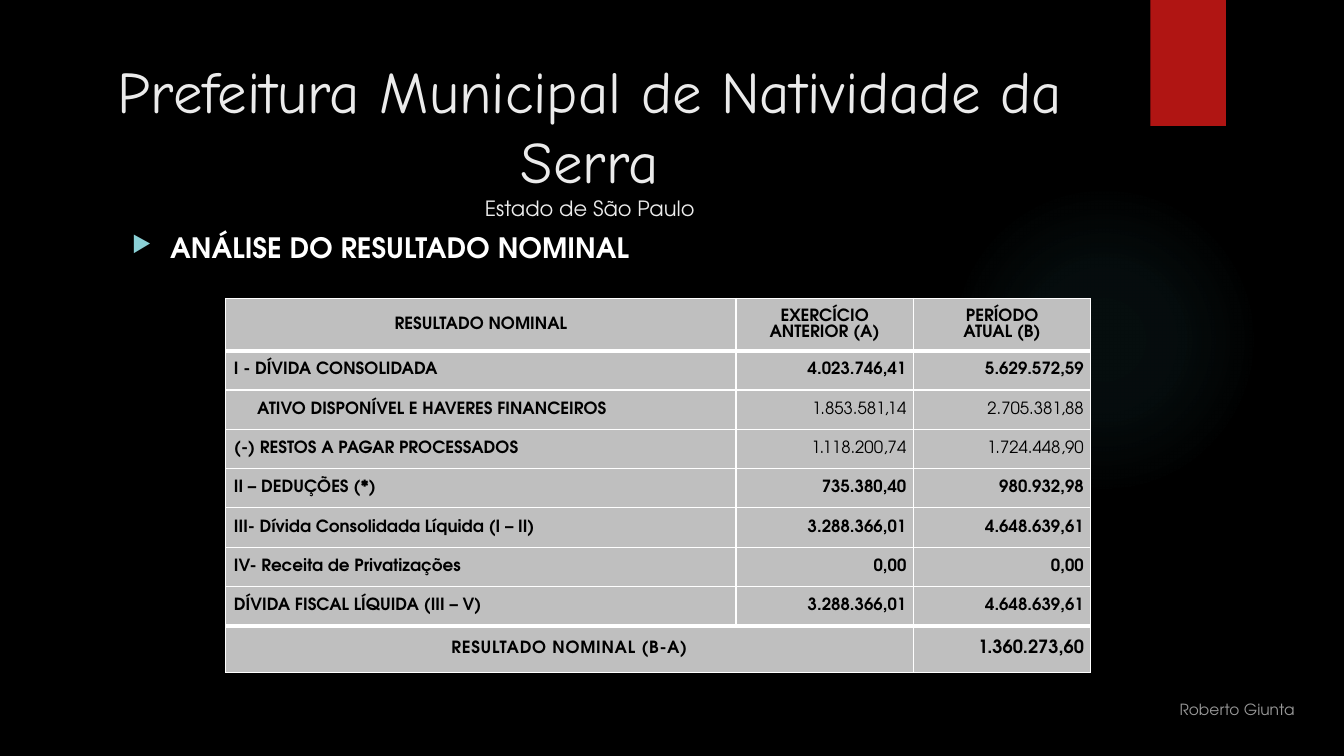
"""Builds the nominal result slide of the Natividade da Serra city hall."""
import pptx
import pptx.util
import pptx.dml.color
import pptx.enum.shapes
import pptx.enum.text
import pptx.oxml
import lxml.etree

Inches, Pt = pptx.util.Inches, pptx.util.Pt
ALIGN, ANCHOR = pptx.enum.text.PP_ALIGN, pptx.enum.text.MSO_ANCHOR
SHAPE = pptx.enum.shapes.MSO_SHAPE
NS = 'xmlns:a="http://schemas.openxmlformats.org/drawingml/2006/main"'
SANS, HAND = "TeX Gyre Adventor", "Comic Neue"
COLORS = {"background": "000000", "ribbon": "B01513", "glow": "50B9C1",
          "bullet": "8AD0D6", "title": "EBEBEB", "heading": "FFFFFF",
          "cell": "BFBFBF", "border": "FFFFFF", "figures": "000000",
          "author": "999999"}


def rgb(name):
    return pptx.dml.color.RGBColor.from_string(COLORS[name])


def style(run, size, color, bold=False, font=SANS):
    run.font.size, run.font.bold, run.font.name = Pt(size), bold, font
    run.font.color.rgb = rgb(color)


presentation = pptx.Presentation()
presentation.slide_width, presentation.slide_height = Inches(13.33), Inches(7.5)
slide = presentation.slides.add_slide(presentation.slide_layouts[5])
slide.background.fill.solid()
slide.background.fill.fore_color.rgb = rgb("background")

glow = slide.shapes.add_shape(SHAPE.OVAL, Inches(9.41), Inches(1.83), Inches(3.08), Inches(3.08))
ribbon = slide.shapes.add_shape(SHAPE.RECTANGLE, Inches(11.41), 0, Inches(0.75), Inches(1.25))
for decoration, color in ((glow, "glow"), (ribbon, "ribbon")):
    decoration.shadow.inherit = False
    decoration.line.fill.background()
    decoration.fill.solid()
    decoration.fill.fore_color.rgb = rgb(color)
stops = "".join(
    f'<a:gs pos="{share * 1000}"><a:srgbClr val="{COLORS["glow"]}">'
    f'<a:alpha val="{alpha * 1000}"/></a:srgbClr></a:gs>'
    for share, alpha in ((0, 7), (36, 6), (69, 0), (100, 0)))
solid = glow.element.spPr.find(".//{*}solidFill")
glow.element.spPr.replace(solid, pptx.oxml.parse_xml(
    f'<a:gradFill {NS}><a:gsLst>{stops}</a:gsLst><a:path path="circle">'
    '<a:fillToRect l="50000" t="50000" r="50000" b="50000"/></a:path></a:gradFill>'))

title = slide.shapes.title
title.left, title.top, title.width, title.height = (Inches(n) for n in (0.71, 0.49, 10.28, 1.53))
title.text_frame.text = "Prefeitura Municipal de Natividade da Serra\vEstado de São Paulo"
title.text_frame.word_wrap = True
title.text_frame.auto_size = pptx.enum.text.MSO_AUTO_SIZE.NONE
title.text_frame.vertical_anchor = ANCHOR.TOP
name_line = title.text_frame.paragraphs[0]
name_line.alignment = ALIGN.CENTER
city, state = name_line.runs
style(city, 42, "title", font=HAND)
style(state, 15, "title")

heading = slide.shapes.add_textbox(Inches(1.21), Inches(2.24), Inches(9.78), Inches(0.5))
heading.text_frame.word_wrap = True
topic = heading.text_frame.paragraphs[0]
topic.text = "ANÁLISE DO RESULTADO NOMINAL"
topic_format = topic._p.get_or_add_pPr()
topic_format.set("marL", str(Inches(0.38)))
topic_format.set("indent", str(-Inches(0.38)))
for bullet in (f'<a:buClr {NS}><a:srgbClr val="{COLORS["bullet"]}"/></a:buClr>',
               f'<a:buSzPct {NS} val="80000"/>', f'<a:buChar {NS} char="▶"/>'):
    topic_format.append(pptx.oxml.parse_xml(bullet))
style(topic.runs[0], 20, "heading", True)

rows = [
    ("RESULTADO NOMINAL", "EXERCÍCIO\nANTERIOR (A)", "PERÍODO\nATUAL (B)"),
    ("I - DÍVIDA CONSOLIDADA", "4.023.746,41", "5.629.572,59"),
    ("ATIVO DISPONÍVEL E HAVERES FINANCEIROS", "1.853.581,14", "2.705.381,88"),
    ("(-) RESTOS A PAGAR PROCESSADOS", "1.118.200,74", "1.724.448,90"),
    ("II – DEDUÇÕES (*)", "735.380,40", "980.932,98"),
    ("III- Dívida Consolidada Líquida (I – II)", "3.288.366,01", "4.648.639,61"),
    ("IV- Receita de Privatizações", "0,00", "0,00"),
    ("DÍVIDA FISCAL LÍQUIDA (III – V)", "3.288.366,01", "4.648.639,61"),
    ("RESULTADO NOMINAL (B-A)", "", "1.360.273,60"),
]
header, detail, light, total = 0, 2, (2, 3), len(rows) - 1
table = slide.shapes.add_table(len(rows), 3, Inches(2.24), Inches(2.96),
                               Inches(8.58), Inches(3.69)).table
table.first_row = table.horz_banding = False
for column, width in zip(table.columns, (5.06, 1.76, 1.76)):
    column.width = Inches(width)
for r, texts in enumerate(rows):
    table.rows[r].height = Inches({header: 0.52, total: 0.46}.get(r, 0.39))
    for c, text in enumerate(texts):
        cell = table.cell(r, c)
        cell.text_frame.text = text
        cell.vertical_anchor = ANCHOR.MIDDLE
        cell.margin_left = cell.margin_right = Inches(0.07 if c and r != header else 0.08)
        cell.margin_top = cell.margin_bottom = 0
        widths = {"L": 1, "R": 1, "T": 3 if r in (header + 1, total) else 1,
                  "B": 3 if r in (header, total - 1) else 1}
        for side, width in widths.items():
            cell._tc.get_or_add_tcPr().append(pptx.oxml.parse_xml(
                f'<a:ln{side} {NS} w="{Pt(width)}"><a:solidFill>'
                f'<a:srgbClr val="{COLORS["border"]}"/></a:solidFill></a:ln{side}>'))
        cell.fill.solid()
        cell.fill.fore_color.rgb = rgb("cell")
        for paragraph in cell.text_frame.paragraphs:
            if r == header or (r == total and c == 0):
                paragraph.alignment = ALIGN.CENTER
            else:
                paragraph.alignment = ALIGN.RIGHT if c else ALIGN.LEFT
            if r == header:
                paragraph.line_spacing = Pt(11.5)
            if r == detail and c == 0:
                paragraph._p.get_or_add_pPr().set("marL", str(Inches(0.23)))
            for run in paragraph.runs:
                style(run, 13 if r == total and c else 12, "figures", c == 0 or r not in light)
                if r == total and c == 0:
                    run.font._element.set("spc", "50")
table.cell(total, 0).merge(table.cell(total, 1))

author = slide.shapes.add_textbox(Inches(8.72), Inches(6.85), Inches(4.22), Inches(0.33))
author.text_frame.word_wrap = True
author.text_frame.vertical_anchor = ANCHOR.BOTTOM
author.text_frame.text = "Roberto Giunta"
author.text_frame.paragraphs[0].alignment = ALIGN.RIGHT
style(author.text_frame.paragraphs[0].runs[0], 11, "author")

presentation.save("out.pptx")
